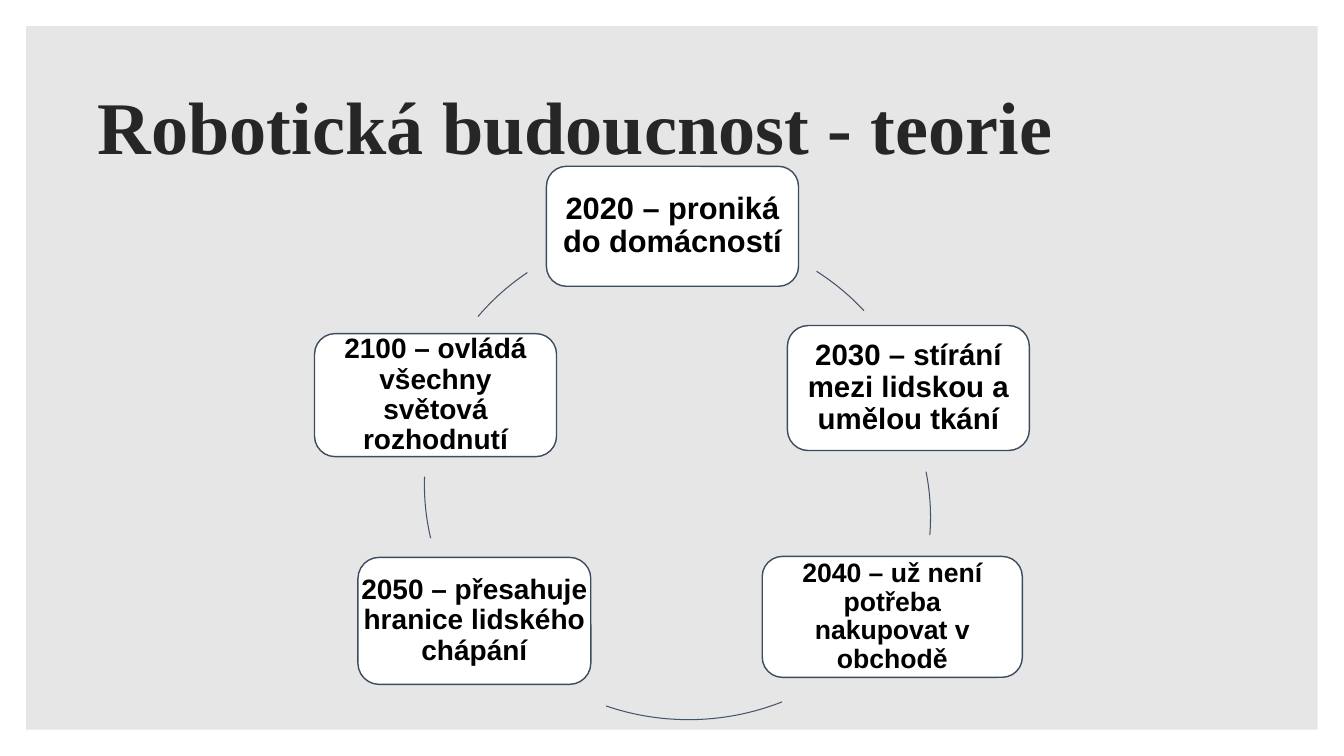
import pptx
import pptx.util
import pptx.dml.color
import pptx.enum.shapes
import pptx.enum.text

Inches = pptx.util.Inches
Pt = pptx.util.Pt
KIND = pptx.enum.shapes.MSO_SHAPE
ALIGN = pptx.enum.text.PP_ALIGN
COLORS = {"panel": "E7E6E6", "title": "262626", "card": "FFFFFF",
          "edge": "3D4B5F", "arc": "44546A", "text": "000000"}


def color(name):
    return pptx.dml.color.RGBColor.from_string(COLORS[name])


def write(shape, text, font, size, tone, align):
    frame = shape.text_frame
    frame.word_wrap = True
    frame.auto_size = pptx.enum.text.MSO_AUTO_SIZE.NONE
    frame.vertical_anchor = pptx.enum.text.MSO_ANCHOR.MIDDLE
    para = frame.paragraphs[0]
    para.alignment = align
    para.line_spacing = 0.9
    run = para.add_run()
    run.text = text
    run.font.name = font
    run.font.size = Pt(size)
    run.font.bold = True
    run.font.color.rgb = color(tone)


deck = pptx.Presentation()
deck.slide_width = Inches(13.33)
deck.slide_height = Inches(7.5)
slide = deck.slides.add_slide(deck.slide_layouts[5])
shapes = slide.shapes

# Title
title = shapes.title
title.left, title.top = Inches(0.87), Inches(0.54)
title.width, title.height = Inches(11), Inches(1.5)
write(title, "Robotická budoucnost - teorie", "Times New Roman", 53,
      "title", ALIGN.LEFT)

# Grey panel behind the title
panel = shapes.add_shape(KIND.RECTANGLE, Inches(0.26), Inches(0.26),
                         Inches(12.81), Inches(6.98))
panel.shadow.inherit = False
panel.fill.solid()
panel.fill.fore_color.rgb = color("panel")
panel.line.fill.background()
title._element.addprevious(panel._element)

# Cards of the cycle: left, top, width, height, size, side inset, text
cards = [
    (5.42, 1.65, 2.5, 1.19, 22, 0.06, "2020 – proniká do domácností"),
    (7.81, 3.23, 2.4, 1.24, 21, 0.06,
     "2030 – stírání mezi lidskou a umělou tkání"),
    (7.56, 5.52, 2.58, 1.2, 19, 0.06,
     "2040 – už není potřeba nakupovat v obchodě"),
    (3.55, 5.53, 2.31, 1.26, 20, -0.09,
     "2050 – přesahuje hranice lidského chápání"),
    (3.12, 3.31, 2.4, 1.22, 20, 0.06,
     "2100 – ovládá všechny světová rozhodnutí"),
]
# Arc after each card: left, top, start and end angle in degrees
arcs = [
    (4.3, 2.3, 304.3, 318.9),
    (4.33, 2.76, 349.4, 4.2),
    (4.38, 2.4, 67.1, 110.1),
    (4.21, 2.44, 167.5, 181.9),
    (4.18, 2.28, 218.6, 234.3),
]
DEGREE = 0.6  # one degree in the units of an arc's adjustment
for (left, top, width, height, size, inset, text), bend in zip(cards, arcs):
    card = shapes.add_shape(KIND.ROUNDED_RECTANGLE, Inches(left), Inches(top),
                            Inches(width), Inches(height))
    card.shadow.inherit = False
    card.adjustments[0] = 0.167
    card.fill.solid()
    card.fill.fore_color.rgb = color("card")
    card.line.color.rgb = color("edge")
    card.line.width = Pt(1)
    frame = card.text_frame
    frame.margin_left = frame.margin_right = Inches(inset)
    frame.margin_top = frame.margin_bottom = Inches(0.06)
    write(card, text, "Arial", size, "text", ALIGN.CENTER)

    x, y, start, end = bend
    arc = shapes.add_shape(KIND.ARC, Inches(x), Inches(y),
                           Inches(4.9), Inches(4.74))
    arc.shadow.inherit = False
    arc.adjustments[0] = start * DEGREE
    arc.adjustments[1] = end * DEGREE
    arc.fill.background()
    arc.line.color.rgb = color("arc")
    arc.line.width = Pt(0.75)

deck.save("out.pptx")
